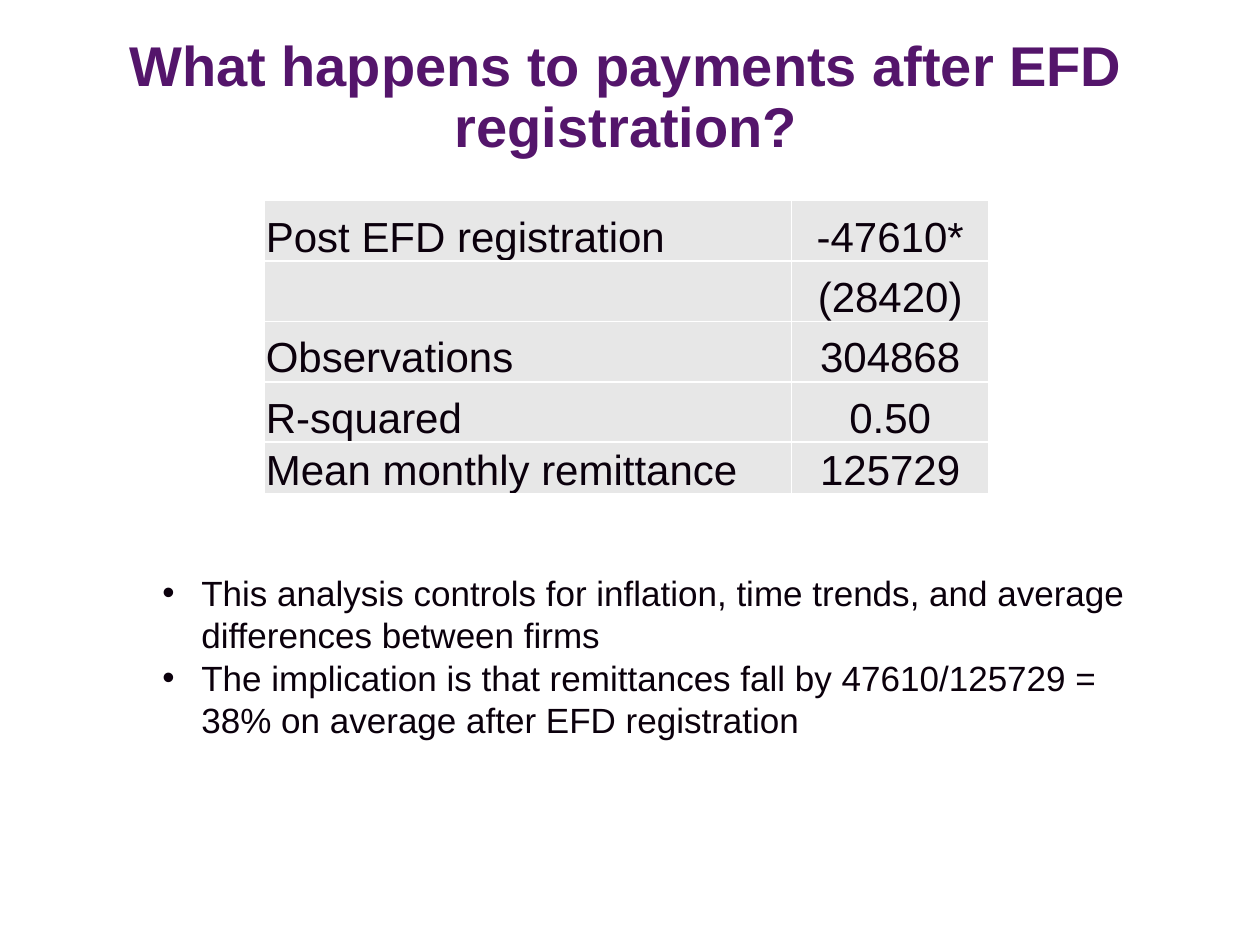
from dataclasses import dataclass

from lxml import etree
from pptx import Presentation
from pptx.dml.color import RGBColor
from pptx.enum.text import MSO_ANCHOR, PP_ALIGN
from pptx.oxml.ns import qn
from pptx.util import Inches, Pt

LEFT, CENTER = PP_ALIGN.LEFT, PP_ALIGN.CENTER
TOP, MIDDLE, BOTTOM = MSO_ANCHOR.TOP, MSO_ANCHOR.MIDDLE, MSO_ANCHOR.BOTTOM


@dataclass(frozen=True)
class Theme:
    font: str = "Arial"
    title_color: str = "54156B"
    text_color: str = "0B000C"
    cell_color: str = "E7E7E7"
    border_color: str = "FFFFFF"
    title_size: int = 32
    table_size: int = 24
    bullet_size: int = 20
    border_width: int = 1


THEME = Theme()
TITLE = "What happens to payments after EFD registration?"
RESULTS = [
    ("Post EFD registration", "-47610*"),
    ("", "(28420)"),
    ("Observations", "304868"),
    ("R-squared", "0.50"),
    ("Mean monthly remittance", "125729"),
]
COLUMN_WIDTHS = [4.18, 1.57]
ROW_HEIGHTS = [0.48] * 4 + [0.38]
FINDINGS = [
    "This analysis controls for inflation, time trends, and average differences between firms",
    "The implication is that remittances fall by 47610/125729 = 38% on average after EFD registration",
]


def write(paragraph, text, size, color=THEME.text_color, bold=False, align=LEFT, spacing=None):
    paragraph.alignment = align
    paragraph.line_spacing = spacing
    paragraph.font.size = Pt(size)
    span = paragraph.add_run()
    span.text = text
    span.font.name = THEME.font
    span.font.size = Pt(size)
    span.font.bold = bold
    span.font.color.rgb = RGBColor.from_string(color)


def add_bullet(paragraph, indent):
    properties = paragraph._p.get_or_add_pPr()
    properties.set("marL", str(Inches(indent)))
    properties.set("indent", str(-Inches(indent)))
    etree.SubElement(properties, qn("a:buFont"), typeface=THEME.font)
    etree.SubElement(properties, qn("a:buChar"), char="•")


def add_box(page, left, top, width, height, anchor=TOP):
    box = page.shapes.add_textbox(Inches(left), Inches(top), Inches(width), Inches(height))
    box.text_frame.word_wrap = True
    box.text_frame.vertical_anchor = anchor
    return box.text_frame


def add_bullets(page, texts, left, top, width, height):
    frame = add_box(page, left, top, width, height)
    for index, text in enumerate(texts):
        paragraph = frame.add_paragraph() if index else frame.paragraphs[0]
        add_bullet(paragraph, 0.31)
        write(paragraph, text, THEME.bullet_size)


def set_borders(cell):
    properties = cell._tc.get_or_add_tcPr()
    for index, side in enumerate(("lnL", "lnR", "lnT", "lnB")):
        line = etree.Element(qn(f"a:{side}"), w=str(Pt(THEME.border_width)))
        fill = etree.SubElement(line, qn("a:solidFill"))
        etree.SubElement(fill, qn("a:srgbClr"), val=THEME.border_color)
        properties.insert(index, line)


def format_cell(cell, text, align):
    cell.fill.solid()
    cell.fill.fore_color.rgb = RGBColor.from_string(THEME.cell_color)
    set_borders(cell)
    cell.vertical_anchor = BOTTOM
    cell.margin_left = cell.margin_right = cell.margin_top = Inches(0.01)
    cell.margin_bottom = 0
    if text:
        write(cell.text_frame.paragraphs[0], text, THEME.table_size, align=align)


def add_results(page, left, top):
    table = page.shapes.add_table(
        len(RESULTS), len(COLUMN_WIDTHS), Inches(left), Inches(top),
        Inches(sum(COLUMN_WIDTHS)), Inches(sum(ROW_HEIGHTS)),
    ).table
    table.first_row = table.horz_banding = False
    for column, width in zip(table.columns, COLUMN_WIDTHS):
        column.width = Inches(width)
    for row, height, texts in zip(table.rows, ROW_HEIGHTS, RESULTS):
        row.height = Inches(height)
        for cell, text, align in zip(row.cells, texts, (LEFT, CENTER)):
            format_cell(cell, text, align)


def main():
    deck = Presentation()
    deck.slide_width, deck.slide_height = Inches(10), Inches(7.5)
    page = deck.slides.add_slide(deck.slide_layouts[6])
    title = add_box(page, 0, 0.24, 9.94, 1.09, anchor=MIDDLE)
    write(title.paragraphs[0], TITLE, THEME.title_size, color=THEME.title_color,
          bold=True, align=CENTER, spacing=0.9)
    add_results(page, 2.1, 1.59)
    add_bullets(page, FINDINGS, 1.19, 4.49, 8.03, 1.75)
    deck.save("out.pptx")


if __name__ == "__main__":
    main()
